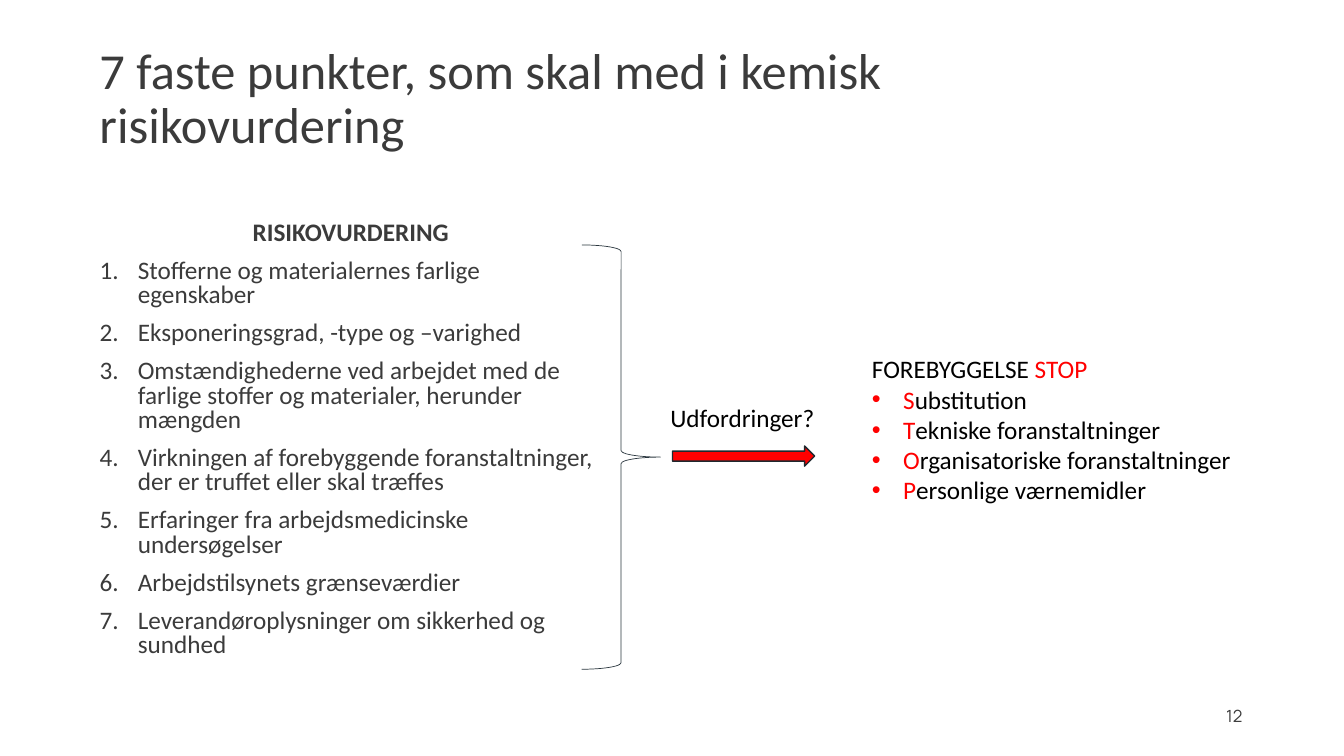
from lxml import etree
from pptx import Presentation
from pptx.dml.color import RGBColor
from pptx.enum.shapes import MSO_SHAPE
from pptx.enum.text import MSO_ANCHOR, PP_ALIGN
from pptx.oxml.ns import qn
from pptx.util import Inches, Pt

BRACE, ARROW = MSO_SHAPE.RIGHT_BRACE, MSO_SHAPE.RIGHT_ARROW
MIDDLE = MSO_ANCHOR.MIDDLE
CENTER, RIGHT = PP_ALIGN.CENTER, PP_ALIGN.RIGHT
WIDE, HIGH = 13.33, 7.5
GREY, BLACK, RED = "3B3B3B", "000000", "FF0000"

POINTS = [
    "Stofferne og materialernes farlige egenskaber",
    "Eksponeringsgrad, -type og –varighed",
    "Omstændighederne ved arbejdet med de farlige stoffer og materialer, herunder mængden",
    "Virkningen af forebyggende foranstaltninger, der er truffet eller skal træffes",
    "Erfaringer fra arbejdsmedicinske undersøgelser",
    "Arbejdstilsynets grænseværdier",
    "Leverandøroplysninger om sikkerhed og sundhed",
]
STOP = [
    "Substitution",
    "Tekniske foranstaltninger",
    "Organisatoriske foranstaltninger",
    "Personlige værnemidler",
]


def color(hex_code):
    return RGBColor.from_string(hex_code)


def add_text(slide, box, anchor=None):
    frame = slide.shapes.add_textbox(*map(Inches, box)).text_frame
    frame.word_wrap = True
    if anchor is not None:
        frame.vertical_anchor = anchor
    return frame


def add_run(para, text, tint, size=18, bold=False, face="Calibri"):
    run = para.add_run()
    run.text = text
    font = run.font
    font.name, font.size, font.bold = face, Pt(size), bold
    font.color.rgb = color(tint)


def add_mark(para, indent, tag, **attrs):
    """Give the paragraph a hanging bullet or number."""
    props = para._p.get_or_add_pPr()
    props.set("marL", str(Inches(indent)))
    props.set("indent", str(-Inches(indent)))
    etree.SubElement(props, qn("a:buFont"), typeface="Arial" if tag == "a:buChar" else "+mj-lt")
    etree.SubElement(props, qn(tag), **attrs)


def add_form(slide, kind, box, edge, width, fill=None):
    form = slide.shapes.add_shape(kind, *map(Inches, box))
    form.shadow.inherit = False
    form.line.color.rgb = color(edge)
    form.line.width = Pt(width)
    if fill:
        form.fill.solid()
        form.fill.fore_color.rgb = color(fill)
    else:
        form.fill.background()


def add_title(slide, box):
    para = add_text(slide, box, MIDDLE).paragraphs[0]
    para.line_spacing = 0.9
    add_run(para, "7 faste punkter, som skal med i kemisk risikovurdering", GREY, 36)


def add_points(slide, box):
    frame = add_text(slide, box)
    head = frame.paragraphs[0]
    head.alignment = CENTER
    head.line_spacing = 0.8
    add_run(head, "RISIKOVURDERING", GREY, bold=True)
    for point in POINTS:
        para = frame.add_paragraph()
        para.line_spacing = 0.8
        para.space_before = Pt(10)
        add_mark(para, 0.38, "a:buAutoNum", type="arabicPeriod")
        add_run(para, point, GREY)


def add_link(slide, box):
    """Brace, label and arrow that lead from the points to STOP."""
    left, top, width, height = box
    mid = top + height / 2
    brace = 0.78
    start = left + brace
    add_form(slide, BRACE, (left, top, brace, height), "2A363E", 0.5)
    add_form(slide, ARROW, (start + 0.12, mid - 0.11, 1.41, 0.2), "1F282E", 1, RED)
    label = add_text(slide, (start, mid - 0.59, width - brace, 0.4))
    add_run(label.paragraphs[0], "Udfordringer?", BLACK)


def add_stop(slide, box):
    frame = add_text(slide, box)
    head = frame.paragraphs[0]
    add_run(head, "FOREBYGGELSE ", BLACK)
    add_run(head, "STOP", RED)
    for word in STOP:
        para = frame.add_paragraph()
        add_mark(para, 0.31, "a:buChar", char="•")
        add_run(para, word[0], RED)
        add_run(para, word[1:], BLACK)


def add_number(slide, box):
    para = add_text(slide, box, MIDDLE).paragraphs[0]
    para.alignment = RIGHT
    add_run(para, "12", GREY, 12, face="Manrope")


def main():
    deck = Presentation()
    deck.slide_width, deck.slide_height = Inches(WIDE), Inches(HIGH)
    slide = deck.slides.add_slide(deck.slide_layouts[6])
    edge = WIDE / 15
    add_title(slide, (edge, 0.4, 9.76, 1.19))
    add_points(slide, (edge, 2.15, 5.18, 4.77))
    add_link(slide, (5.77, 2.43, 2.54, 4.21))
    add_stop(slide, (8.55, 3.46, 3.86, 1.62))
    add_number(slide, (9.42, 6.9, 3, 0.4))
    deck.save("out.pptx")


if __name__ == "__main__":
    main()
